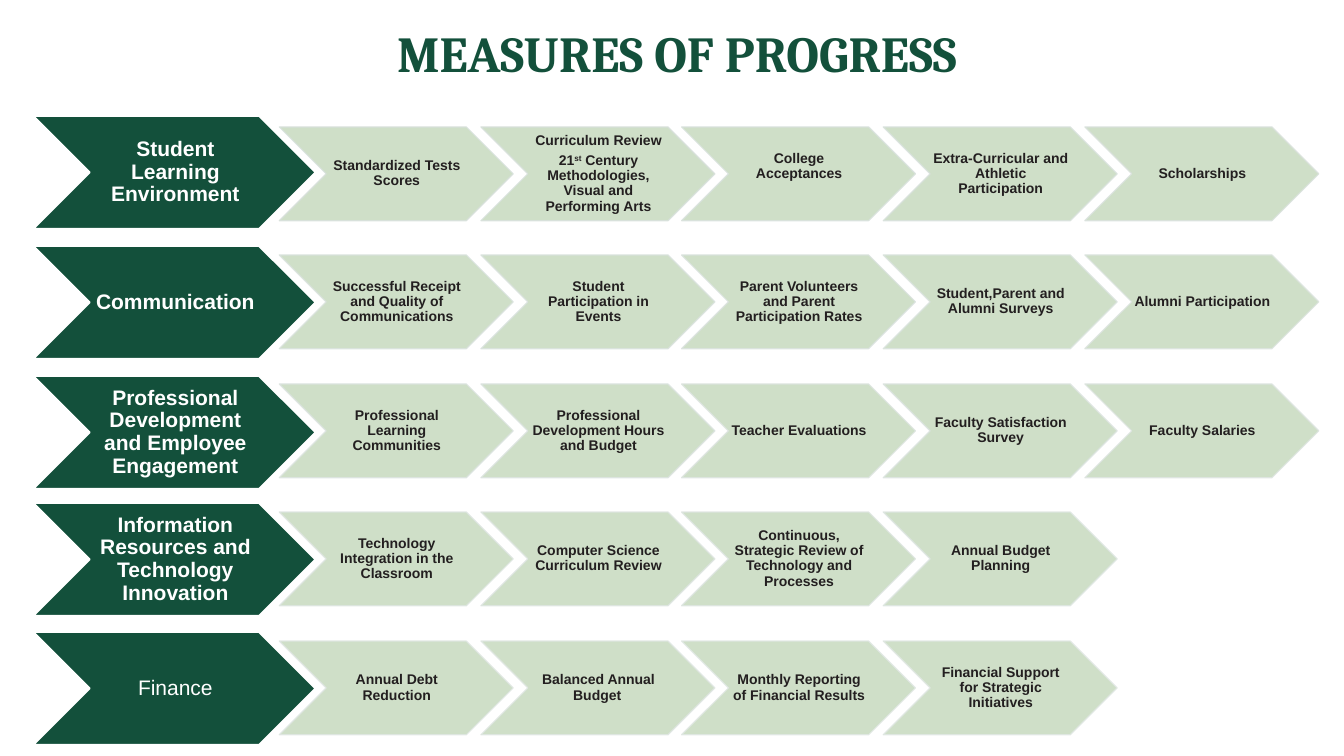
from pptx import Presentation
from pptx import util as u
from pptx.dml.color import RGBColor
from pptx.enum import shapes, text
from pptx.oxml.ns import qn
from lxml import etree

PX = 9144
HEX = {"dark": "13503B", "pale": "CFDFC8", "ink": "231F20", "white": "FFFFFF",
       "edge": "D8E1DC", "fade": "E1E8E4"}
HEADS = [115, 244, 373, 499, 627]
ROWS = [
    ("Student Learning Environment",
     ["Standardized Tests Scores",
      "Curriculum Review\n21^st^ Century Methodologies, Visual and Performing Arts",
      "College Acceptances",
      "Extra-Curricular and Athletic Participation",
      "Scholarships"]),
    ("Communication",
     ["Successful Receipt and Quality of Communications",
      "Student Participation in Events",
      "Parent Volunteers and Parent Participation Rates",
      "Student,Parent and Alumni Surveys",
      "Alumni Participation"]),
    ("Professional Development and Employee Engagement",
     ["Professional Learning Communities",
      "Professional Development Hours and Budget",
      "Teacher Evaluations",
      "Faculty Satisfaction Survey",
      "Faculty Salaries"]),
    ("Information Resources and Technology Innovation",
     ["Technology Integration in the Classroom",
      "Computer Science Curriculum Review",
      "Continuous, Strategic Review of Technology and Processes",
      "Annual Budget Planning"]),
    ("Finance",
     ["Annual Debt Reduction",
      "Balanced Annual Budget\t",
      "Monthly Reporting of Financial Results",
      "Financial Support for Strategic Initiatives"]),
]


def rgb(code):
    return RGBColor.from_string(code)


def blend(start, end, part):
    pairs = zip(rgb(start), rgb(end))
    return "".join(f"{round(a + (b - a) * part):02X}" for a, b in pairs)


def write(shape, words, size, color, font="Arial", bold=True, space=0.9,
          inset=(1, 1, 0, 1), anchor=text.MSO_ANCHOR.MIDDLE):
    frame = shape.text_frame
    frame.word_wrap = True
    frame.auto_size = text.MSO_AUTO_SIZE.NONE
    frame.vertical_anchor = anchor
    (frame.margin_left, frame.margin_top,
     frame.margin_right, frame.margin_bottom) = [n * PX for n in inset]
    for i, line in enumerate(words.split("\n")):
        para = frame.add_paragraph() if i else frame.paragraphs[0]
        para.alignment = text.PP_ALIGN.CENTER
        para.line_spacing = space
        para.space_before = u.Pt(3.5 if i else 0)
        for j, part in enumerate(line.split("^")):
            run = para.add_run()
            run.text = part
            run.font.name = font
            run.font.size = u.Pt(size)
            run.font.bold = bold
            run.font.color.rgb = rgb(HEX[color])
            if j % 2:
                run._r.get_or_add_rPr().set("baseline", "30000")


def chevron(slide, box, fill, edge, width, alpha=100):
    shape = slide.shapes.add_shape(shapes.MSO_SHAPE.CHEVRON, *[n * PX for n in box])
    shape.shadow.inherit = False
    shape.fill.solid()
    shape.fill.fore_color.rgb = rgb(HEX[fill])
    shape.line.color.rgb = rgb(edge)
    shape.line.width = u.Pt(width)
    if alpha < 100:
        tint = shape.line._ln.find(".//" + qn("a:srgbClr"))
        etree.SubElement(tint, qn("a:alpha")).set("val", str(alpha * 1000))
    return shape


def title(slide, words):
    head = slide.shapes.title
    head.left, head.top, head.width, head.height = [n * PX for n in (88, 17, 1167, 71)]
    write(head, words, 36, "dark", font="Cambria", space=1.0,
          inset=(10, 5, 10, 5), anchor=text.MSO_ANCHOR.TOP)


def main():
    deck = Presentation()
    deck.slide_width, deck.slide_height = 1333 * PX, 750 * PX
    slide = deck.slides.add_slide(deck.slide_layouts[5])
    title(slide, "MEASURES OF PROGRESS")
    total = sum(len(steps) for _, steps in ROWS)
    count = 0
    for row, (goal, steps) in enumerate(ROWS):
        head = chevron(slide, (33, HEADS[row], 280, 112), "dark", HEX["white"], 1.35)
        write(head, goal, 15, "white", bold=goal != "Finance", inset=(2, 1, 0, 1))
        for col, step in enumerate(steps):
            box = (round(277 + 199.75 * col), 126 + 255 * row // 2, 232, 93)
            edge = blend(HEX["edge"], HEX["fade"], count / (total - 1))
            bar = chevron(slide, box, "pale", edge, 0.85, alpha=90)
            low = 16 if step == "College Acceptances" else 1
            write(bar, step, 10, "ink", inset=(1, 1, 0, low))
            count += 1
    deck.save("out.pptx")


if __name__ == "__main__":
    main()
